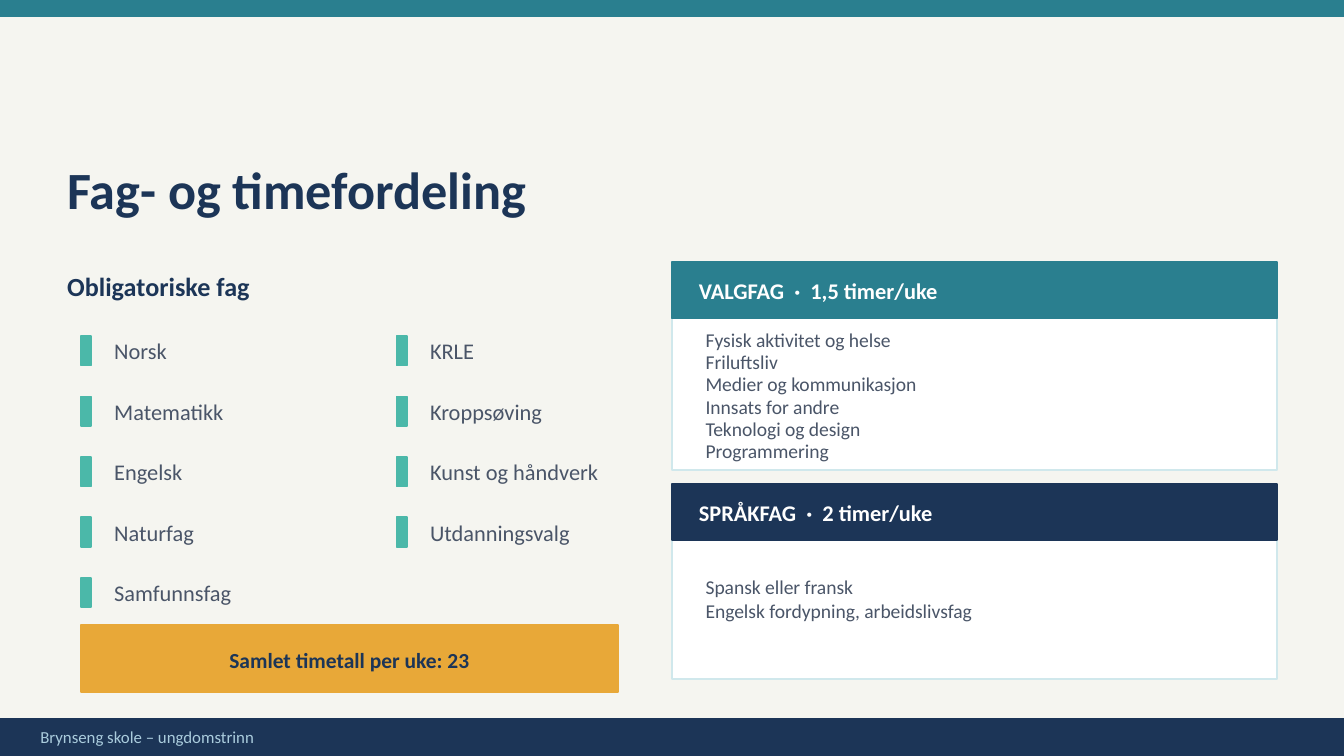
from pptx import Presentation
from pptx.dml.color import RGBColor
from pptx.enum.shapes import MSO_SHAPE as SHAPE
from pptx.enum.text import MSO_ANCHOR as ANCHOR, MSO_AUTO_SIZE as AUTO, PP_ALIGN as ALIGN
from pptx.oxml.ns import qn
from pptx.util import Inches, Pt

NAVY, TEAL, MINT, AMBER = "1C3557", "2A7F8F", "4BB8A9", "E8A838"
GREY, WHITE, PALE, MIST, CREAM = "4A5568", "FFFFFF", "D0E8EC", "AACCDD", "F5F5F0"
SUBJECTS = [
    ["Norsk", "Matematikk", "Engelsk", "Naturfag", "Samfunnsfag"],
    ["KRLE", "Kroppsøving", "Kunst og håndverk", "Utdanningsvalg"],
]
ELECTIVES = ["Fysisk aktivitet og helse", "Friluftsliv", "Medier og kommunikasjon",
             "Innsats for andre", "Teknologi og design", "Programmering"]
LANGUAGES = ["Spansk eller fransk", "Engelsk fordypning, arbeidslivsfag"]


def rgb(color):
    """Turn a hex string into a colour."""
    return RGBColor.from_string(color)


def place(sp, x, y, w, h):
    """Position a shape, in inches."""
    sp.left, sp.top, sp.width, sp.height = map(Inches, (x, y, w, h))


def add_rect(s, x, y, w, h, fill, line=None):
    """Add a flat rectangle, outlined in its own fill by default."""
    sp = s.shapes.add_shape(SHAPE.RECTANGLE, *map(Inches, (x, y, w, h)))
    sp.shadow.inherit = False
    sp.fill.solid()
    sp.fill.fore_color.rgb = rgb(fill)
    sp.line.color.rgb = rgb(line or fill)
    sp.line.width = Pt(1)


def set_text(sp, lines, size=12, color=GREY, bold=False, align=ALIGN.LEFT,
             anchor=ANCHOR.MIDDLE, spacing=1.0):
    """Fill a shape with formatted paragraphs."""
    tf = sp.text_frame
    tf.word_wrap, tf.auto_size, tf.vertical_anchor = True, AUTO.NONE, anchor
    tf.margin_left = tf.margin_top = tf.margin_right = tf.margin_bottom = 0
    tf.text = "\n".join(lines)
    for p in tf.paragraphs:
        pPr = p._p.get_or_add_pPr()
        pPr.set("marL", "0")
        pPr.set("indent", "0")
        pPr.append(pPr.makeelement(qn("a:buNone"), {}))
        p.alignment, p.line_spacing, p.space_before = align, spacing, Pt(0)
        for r in p.runs:
            r.font.name, r.font.size, r.font.bold = "Calibri", Pt(size), bold
            r.font.color.rgb = rgb(color)


def add_text(s, text, x, y, w, h, **fmt):
    """Add a one-line text box."""
    sp = s.shapes.add_textbox(*map(Inches, (x, y, w, h)))
    set_text(sp, [text], **fmt)


def add_subject(s, name, x, y):
    """Add a subject with its marker bar."""
    add_rect(s, x, y + 0.05, 0.08, 0.22, MINT)
    add_text(s, name, x + 0.25, y, 2.3, 0.32)


def add_panel(s, heading, y, h, color, body, lines, gap, spacing):
    """Add a headed panel and lay its list placeholder on top."""
    add_rect(s, 5, y, 4.5, h, WHITE, PALE)
    add_rect(s, 5, y, 4.5, 0.42, color)
    add_text(s, heading, 5.2, y, 4.1, 0.42, color=WHITE, bold=True)
    place(body, 5.25, y + gap, 4.1, h - gap - 0.05)
    set_text(body, lines, size=10.5, anchor=ANCHOR.TOP, spacing=spacing)
    s.shapes.element.append(body.element)


def main():
    """Build the slide."""
    prs = Presentation()
    prs.slide_width, prs.slide_height = Inches(10), Inches(10) * 9 // 16
    s = prs.slides.add_slide(prs.slide_layouts[3])
    s.background.fill.solid()
    s.background.fill.fore_color.rgb = rgb(CREAM)
    title, electives, languages = s.placeholders

    add_rect(s, 0, 0, 10, 0.12, TEAL)
    add_rect(s, 0, 5.35, 10, 0.28, NAVY)
    add_text(s, "Brynseng skole – ungdomstrinn", 0.3, 5.36, 9.4, 0.24, size=9, color=MIST)
    place(title, 0.5, 1.08, 9, 0.65)
    set_text(title, ["Fag- og timefordeling"], size=28, color=NAVY, bold=True)

    add_text(s, "Obligatoriske fag", 0.5, 1.95, 4.4, 0.35, size=14, color=NAVY, bold=True)
    for col, names in enumerate(SUBJECTS):
        for row, name in enumerate(names):
            add_subject(s, name, 0.6 + 2.35 * col, 2.45 + 0.45 * row)
    add_rect(s, 0.6, 4.65, 4, 0.5, AMBER)
    add_text(s, "Samlet timetall per uke: 23", 0.6, 4.66, 4, 0.5,
             size=11.5, color=NAVY, bold=True, align=ALIGN.CENTER)

    add_panel(s, "VALGFAG  ·  1,5 timer/uke", 1.95, 1.55, TEAL, electives, ELECTIVES, 0.5, 0.95)
    add_panel(s, "SPRÅKFAG  ·  2 timer/uke", 3.6, 1.45, NAVY, languages, LANGUAGES, 0.68, 1.0)
    prs.save("out.pptx")


if __name__ == "__main__":
    main()
